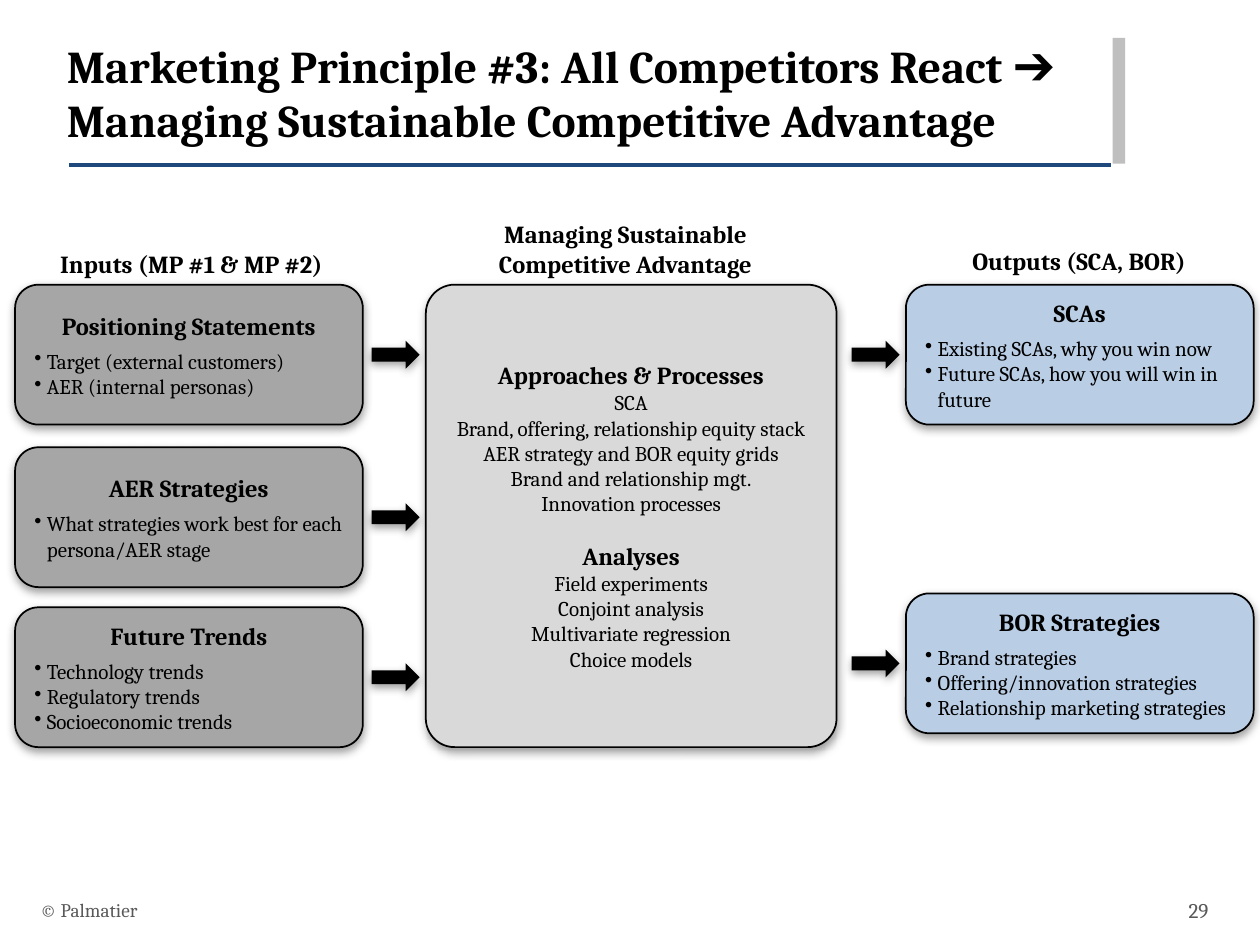
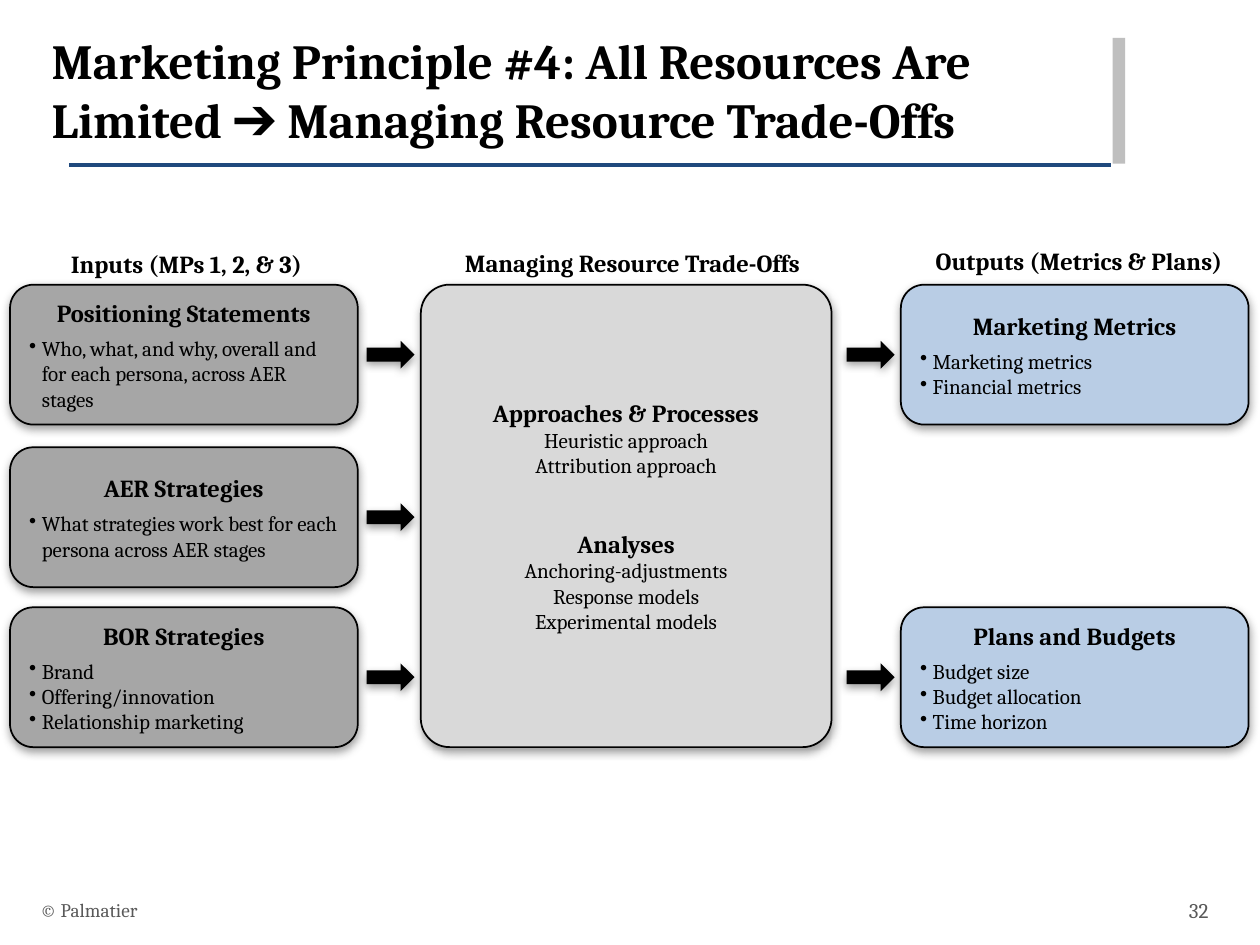
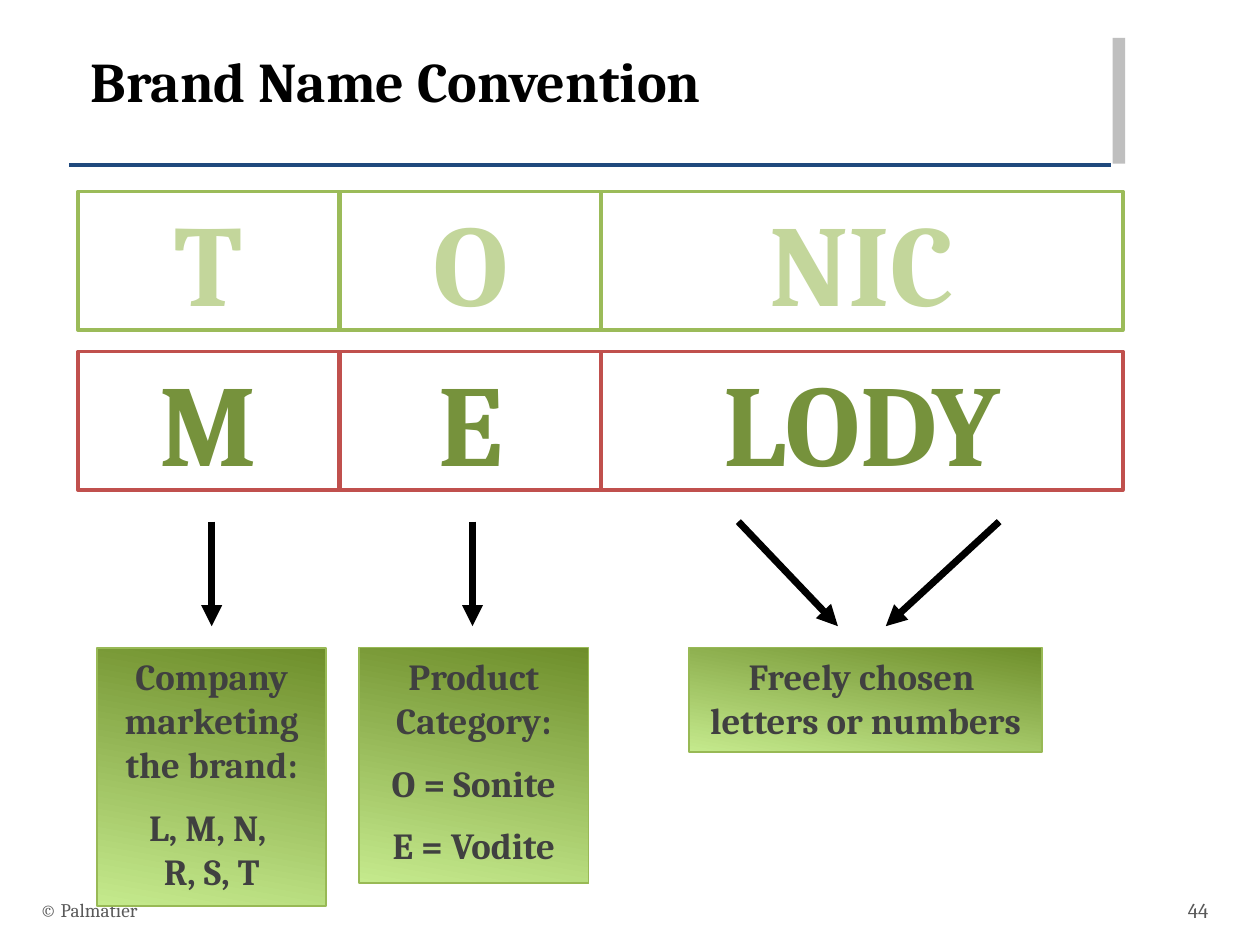
from dataclasses import dataclass

from lxml.etree import SubElement
from pptx import Presentation
from pptx.dml.color import RGBColor
from pptx.enum.shapes import MSO_CONNECTOR, MSO_SHAPE
from pptx.enum.text import MSO_ANCHOR, MSO_AUTO_SIZE, PP_ALIGN
from pptx.oxml.ns import qn
from pptx.util import Inches, Pt

COLUMNS, ROWS = 100, 75
FONT = "Cambria"
COLORS = {
    "ink": "000000", "paper": "FFFFFF", "rule": "1F497D", "bar": "BFBFBF",
    "footer": "595959", "input": "A6A6A6", "process": "D9D9D9",
    "output": "B9CDE5", "shadow": "808080", "note": "404040",
    "note_edge": "98B955", "note_top": "6E8E2B", "note_bottom": "C5EA8D",
    "tonic_edge": "9BBB59", "tonic": "C3D69B",
    "melody_edge": "C0504D", "melody": "76923C",
}


@dataclass
class Para:
    """One paragraph and its look; line breaks are newlines in the text."""
    text: str
    size: float = 12
    color: str = "ink"
    bold: bool = False
    align: PP_ALIGN = PP_ALIGN.CENTER
    before: float = 0
    bullet: bool = False


def heading(text, before=0):
    """Return a bold centred heading paragraph."""
    return Para(text, 14, bold=True, before=before)


class Deck:
    """Holds the shared style and the slide being built."""

    def __init__(self):
        """Start an empty presentation on the grid."""
        self.show = Presentation()
        self.show.slide_width, self.show.slide_height = Inches(10), Inches(7.5)
        self.slide = None

    def place(self, col, row, width, height):
        """Turn grid columns and rows into lengths."""
        across, down = self.show.slide_width / COLUMNS, self.show.slide_height / ROWS
        return (round(col * across), round(row * down),
                round(width * across), round(height * down))

    def color(self, name):
        """Look up a named colour."""
        return RGBColor.from_string(COLORS[name])

    def set_text(self, frame, paras, anchor=MSO_ANCHOR.TOP):
        """Fill a text frame with paragraphs."""
        frame.word_wrap = True
        frame.auto_size = MSO_AUTO_SIZE.NONE
        frame.vertical_anchor = anchor
        for index, para in enumerate(paras):
            target = frame.add_paragraph() if index else frame.paragraphs[0]
            target.alignment = para.align
            if para.bullet:
                props = target._p.get_or_add_pPr()
                props.set("marL", str(Inches(0.1)))
                props.set("indent", str(-Inches(0.1)))
                SubElement(props, qn("a:buChar")).set("char", "•")
            if para.before:
                target.space_before = Pt(para.before)
            for number, line in enumerate(para.text.split("\n")):
                if number:
                    target.add_line_break()
                run = target.add_run()
                run.text = line
                run.font.name, run.font.size = FONT, Pt(para.size)
                run.font.bold = para.bold
                run.font.color.rgb = self.color(para.color)

    def start(self, title, size, area, number):
        """Open a slide with its title, rule, side bar and footer."""
        self.slide = self.show.slides.add_slide(self.show.slide_layouts[5])
        holder = self.slide.shapes.title
        holder.left, holder.top, holder.width, holder.height = self.place(*area)
        self.set_text(holder.text_frame, [Para(title, size, bold=True, align=PP_ALIGN.LEFT)])
        self.line((5.5, 13.1), (88.2, 13.1), "rule", 2)
        self.shape((88.3, 3, 1, 10), "bar")
        self.label((2.2, 70.2, 67, 4), MSO_ANCHOR.MIDDLE,
                   Para("© Palmatier", 11, "footer", align=PP_ALIGN.LEFT))
        self.label((90.8, 70.2, 6.1, 4), MSO_ANCHOR.MIDDLE,
                   Para(str(number), 12, "footer", align=PP_ALIGN.RIGHT))

    def label(self, area, anchor, *paras):
        """Add a plain text box."""
        box = self.slide.shapes.add_textbox(*self.place(*area))
        self.set_text(box.text_frame, paras, anchor)

    def shape(self, area, fill, edge=None, weight=1, kind=MSO_SHAPE.RECTANGLE,
              paras=(), anchor=MSO_ANCHOR.MIDDLE, shadow=False):
        """Add a preset shape; a pair of fills makes a gradient."""
        shape = self.slide.shapes.add_shape(kind, *self.place(*area))
        shape.shadow.inherit = False
        if isinstance(fill, tuple):
            shape.fill.gradient()
            shape.fill.gradient_angle = 260
            for stop, name in zip(shape.fill.gradient_stops, fill):
                stop.color.rgb = self.color(name)
        else:
            shape.fill.solid()
            shape.fill.fore_color.rgb = self.color(fill)
        if edge:
            shape.line.color.rgb = self.color(edge)
            shape.line.width = Pt(weight)
        else:
            shape.line.fill.background()
        if shadow:
            self.cast_shadow(shape)
        if paras:
            self.set_text(shape.text_frame, paras, anchor)
        return shape

    def cast_shadow(self, shape):
        """Give a shape a soft shadow straight below it."""
        effects = shape._element.spPr.find(qn("a:effectLst"))
        outer = SubElement(effects, qn("a:outerShdw"), blurRad=str(Pt(5)),
                           dist=str(Pt(2)), dir="5400000", rotWithShape="0")
        tint = SubElement(outer, qn("a:srgbClr"), val=COLORS["shadow"])
        SubElement(tint, qn("a:alpha"), val="75000")

    def line(self, begin, end, color, weight, arrow=False):
        """Add a straight line, with an arrowhead at its end if asked."""
        link = self.slide.shapes.add_connector(
            MSO_CONNECTOR.STRAIGHT, *self.place(*begin, *end))
        link.line.color.rgb = self.color(color)
        link.line.width = Pt(weight)
        if arrow:
            SubElement(link.line._ln, qn("a:tailEnd"), type="triangle")
        SubElement(link._element.spPr, qn("a:effectLst"))

    def card(self, col, row, fill, title, points):
        """Add a rounded card with a heading and bullets."""
        bullets = [Para(point, align=PP_ALIGN.LEFT, bullet=True,
                        before=0 if index else 4.8)
                   for index, point in enumerate(points)]
        self.shape((col, row, 27.6, 11.1), fill, "ink", shadow=True,
                   kind=MSO_SHAPE.ROUNDED_RECTANGLE, paras=[heading(title), *bullets])

    def flow(self, left, process_area, headings, inputs, process, gap, outputs, output_rows):
        """Add inputs, the central process and outputs, joined by block arrows."""
        areas = ((left + 0.4, 19.3, 27.2, 3.4), process_area, (71.9, 19, 27.5, 3.4))
        for area, text in zip(areas, headings):
            self.label(area, MSO_ANCHOR.TOP, heading(text))
        paras = []
        for title, steps in process.items():
            paras.append(heading(title, gap if paras else 0))
            paras.extend(Para(step) for step in steps)
        panel = self.shape((left + 32.6, 22.6, 32.6, 36.7), "process", "ink", shadow=True,
                           kind=MSO_SHAPE.ROUNDED_RECTANGLE, paras=paras)
        panel.adjustments[0] = 0.07
        sides = ((inputs, (22.6, 35.5, 48.2), 0, 28.3, "input"),
                 (outputs, output_rows, 70.7, 66.4, "output"))
        for cards, rows, card_shift, arrow_shift, fill in sides:
            for (title, points), row in zip(cards.items(), rows):
                self.card(left + card_shift, row, fill, title, points)
                self.shape((left + arrow_shift, row + 4.45, 3.8, 2.2), "ink",
                           kind=MSO_SHAPE.RIGHT_ARROW, shadow=True)

    def name_row(self, row, parts, edge, color):
        """Add a brand name split into its three framed parts."""
        for part, col, width in zip(parts, (6.2, 27, 47.7), (20.7, 20.7, 41.4)):
            self.shape((col, row, width, 11), "paper", edge, 2.25,
                       paras=[Para(part, 66, color, True)])

    def note(self, col, width, height, texts):
        """Add a green gradient note."""
        paras = [Para(text, 21, "note", True, before=10.5 if index else 0)
                 for index, text in enumerate(texts)]
        self.shape((col, 51.4, width, height), ("note_top", "note_bottom"), "note_edge",
                   paras=paras, anchor=MSO_ANCHOR.TOP)


def main():
    """Build the three slides and save them."""
    deck = Deck()

    deck.start("Marketing Principle #3: All Competitors React ➔ "
               "Managing Sustainable Competitive Advantage",
               26, (4.3, 2.5, 87.2, 8.8), 29)
    deck.flow(
        1.2, (33.8, 16.9, 31.7, 5.7),
        ("Inputs (MP #1 & MP #2)", "Managing Sustainable Competitive Advantage",
         "Outputs (SCA, BOR)"),
        {"Positioning Statements": ["Target (external customers)", "AER (internal personas)"],
         "AER Strategies": ["What strategies work best for each persona/AER stage"],
         "Future Trends": ["Technology trends", "Regulatory trends", "Socioeconomic trends"]},
        {"Approaches & Processes": [
            "SCA", "Brand, offering, relationship equity stack",
            "AER strategy and BOR equity grids", "Brand and relationship mgt.",
            "Innovation processes"],
         "Analyses": ["Field experiments", "Conjoint analysis",
                      "Multivariate regression", "Choice models"]},
        14.4,
        {"SCAs": ["Existing SCAs, why you win now",
                  "Future SCAs, how you will win in future"],
         "BOR Strategies": ["Brand strategies", "Offering/innovation strategies",
                            "Relationship marketing strategies"]},
        (22.6, 47.1))

    deck.start("Marketing Principle #4: All Resources Are Limited ➔ "
               "Managing Resource Trade-Offs",
               28, (3.1, 1.9, 82.6, 8.8), 32)
    deck.flow(
        0.8, (32.3, 19.2, 35.8, 3.4),
        ("Inputs (MPs 1, 2, & 3)", "Managing Resource Trade-Offs",
         "Outputs (Metrics & Plans)"),
        {"Positioning Statements": [
            "Who, what, and why, overall and for each persona, across AER stages"],
         "AER Strategies": ["What strategies work best for each persona across AER stages"],
         "BOR Strategies": ["Brand", "Offering/innovation", "Relationship marketing"]},
        {"Approaches & Processes": ["Heuristic approach", "Attribution approach"],
         "Analyses": ["Anchoring-adjustments", "Response models", "Experimental models"]},
        28.8,
        {"Marketing Metrics": ["Marketing metrics", "Financial metrics"],
         "Plans and Budgets": ["Budget size", "Budget allocation", "Time horizon"]},
        (22.6, 48.2))

    deck.start("Brand Name Convention", 32, (6.2, 3.2, 71.7, 8.6), 44)
    deck.name_row(15.2, ("T", "O", "NIC"), "tonic_edge", "tonic")
    deck.name_row(27.9, ("M", "E", "LODY"), "melody_edge", "melody")
    for begin, end in ((16.8, 16.8), (37.5, 37.5), (58.6, 66.5), (79.3, 70.3)):
        deck.line((begin, 41.4), (end, 49.7), "ink", 4, arrow=True)
    deck.note(7.7, 18.2, 20.5, ["Company marketing the brand:", "L, M, N, \nR, S, T"])
    deck.note(28.5, 18.2, 18.7, ["Product Category:", "O = Sonite", "E = Vodite"])
    deck.note(54.7, 28, 8.3, ["Freely chosen \nletters or numbers"])

    deck.show.save("out.pptx")


if __name__ == "__main__":
    main()
